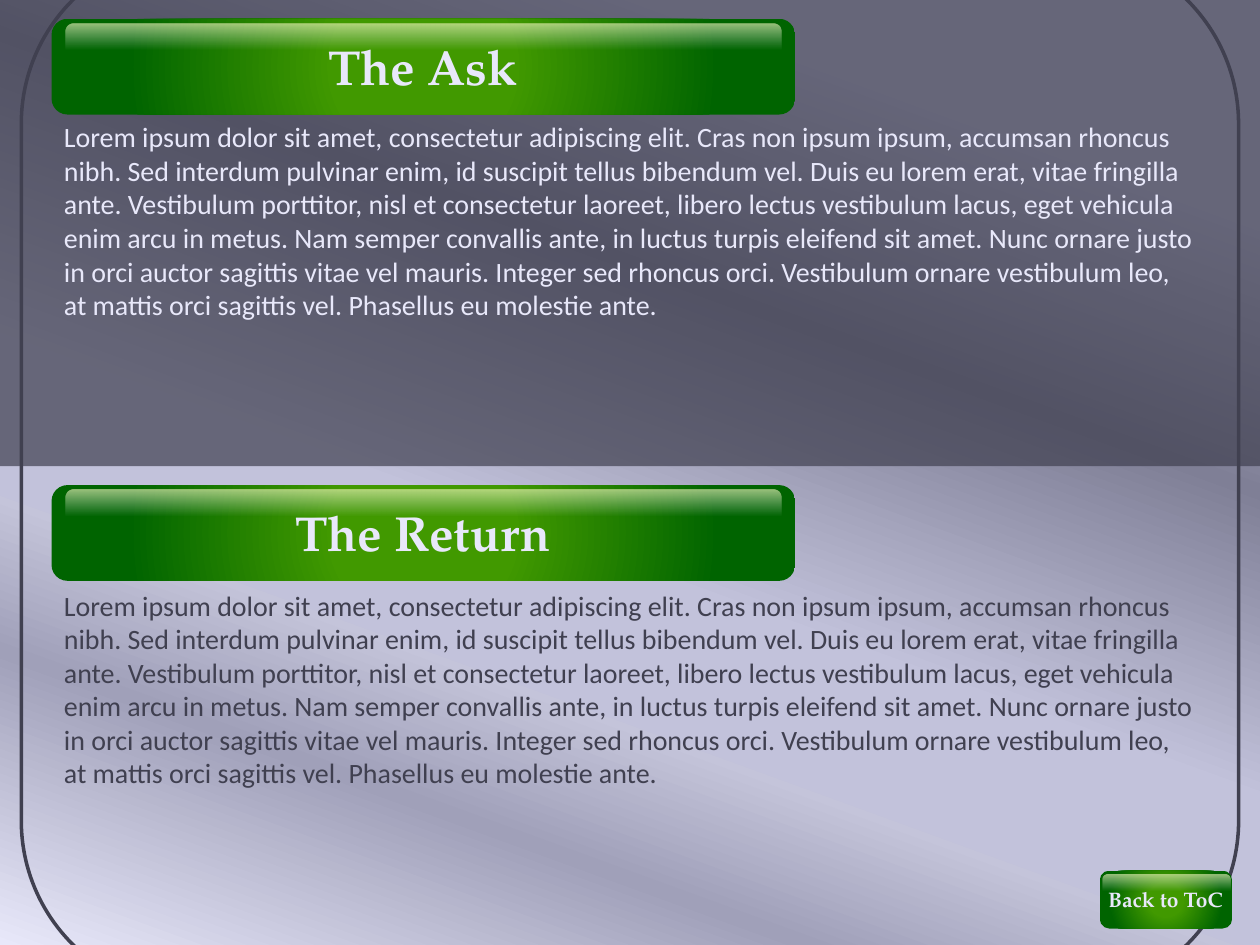
from dataclasses import dataclass
from typing import NamedTuple

from lxml import etree
from pptx import Presentation
from pptx import util as u
from pptx.dml.color import RGBColor
from pptx.enum import shapes, text
from pptx.oxml import ns

SERIF, SANS = "TeX Gyre Pagella", "Calibri"
PALE, DARK = "E8E8FA", "404050"
LOREM = (
    "Lorem ipsum dolor sit amet, consectetur adipiscing elit. Cras non ipsum ipsum, "
    "accumsan rhoncus nibh. Sed interdum pulvinar enim, id suscipit tellus bibendum vel. "
    "Duis eu lorem erat, vitae fringilla ante. Vestibulum porttitor, nisl et consectetur "
    "laoreet, libero lectus vestibulum lacus, eget vehicula enim arcu in metus. Nam semper "
    "convallis ante, in luctus turpis eleifend sit amet. Nunc ornare justo in orci auctor "
    "sagittis vitae vel mauris. Integer sed rhoncus orci. Vestibulum ornare vestibulum leo, "
    "at mattis orci sagittis vel. Phasellus eu molestie ante."
)


class Box(NamedTuple):
    left: float
    top: float
    width: float
    height: float

    def emu(self) -> list:
        return [u.Cm(v) for v in self]

    def down(self, dy: float) -> "Box":
        return self._replace(top=self.top + dy)


class Stop(NamedTuple):
    pos: int
    color: str
    alpha: int = 100


@dataclass
class Button:
    label: str
    size: int
    bar: Box
    gloss: Box
    caption: Box


@dataclass
class Section:
    title: str
    top: float
    body_top: float
    color: str


SKY = [Stop(16, "C0C0DC"), Stop(35, "7F7F96"), Stop(57, "C2C2DB"),
       Stop(68, "C4C4DA"), Stop(79, "A0A0B9"), Stop(100, PALE)]
GREEN = [Stop(24, "419900"), Stop(79, "006400")]
GLOSS = [Stop(0, "FFFFCC", 60), Stop(55, "E1E8F5", 0)]

SECTIONS = [Section("The Ask", 0, 2.29, PALE), Section("The Return", 9.4, 11.73, DARK)]
BAR = Box(1.04, 0.38, 14.99, 1.93)
BAR_GLOSS = Box(1.32, 0.48, 14.43, 0.97)
BAR_CAPTION = Box(2.01, 0.61, 13.03, 1.45)
BACK = Button("Back to ToC", 12, Box(22.17, 17.55, 2.67, 1.17),
              Box(22.23, 17.63, 2.57, 0.61), Box(21.59, 17.75, 3.81, 0.76))


def rgb(color: str) -> RGBColor:
    return RGBColor.from_string(color)


def sub(parent, tag: str, **attrs):
    return etree.SubElement(parent, ns.qn(tag), {k: str(v) for k, v in attrs.items()})


def set_gradient(fill, parent, stops: list, angle: int | None = None) -> None:
    fill.background()
    grad = etree.Element(ns.qn("a:gradFill"), rotWithShape="1")
    parent.replace(parent.find(ns.qn("a:noFill")), grad)
    gs_list = sub(grad, "a:gsLst")
    for stop in stops:
        gs = sub(gs_list, "a:gs", pos=stop.pos * 1000)
        clr = sub(gs, "a:srgbClr", val=stop.color)
        if stop.alpha < 100:
            sub(clr, "a:alpha", val=stop.alpha * 1000)
    if angle is None:
        circle = sub(grad, "a:path", path="circle")
        sub(circle, "a:fillToRect", l=50000, t=50000, r=50000, b=50000)
    else:
        sub(grad, "a:lin", ang=angle * 60000, scaled=0)


def add_shape(parent, kind, box: Box):
    sp = parent.add_shape(kind, *box.emu())
    sp.shadow.inherit = False
    sp.fill.background()
    sp.line.fill.background()
    return sp


def add_text(parent, box: Box, words: str, size: int, font: str, color: str,
             title: bool = False) -> None:
    tf = parent.add_textbox(*box.emu()).text_frame
    tf.word_wrap = True
    tf.auto_size = text.MSO_AUTO_SIZE.SHAPE_TO_FIT_TEXT
    tf.text = words
    p = tf.paragraphs[0]
    p.alignment = text.PP_ALIGN.CENTER if title else text.PP_ALIGN.LEFT
    f = p.runs[0].font
    f.size, f.name, f.bold = u.Pt(size), font, title
    f.color.rgb = rgb(color)


def add_button(s, button: Button) -> None:
    grp = s.shapes.add_group_shape().shapes
    for box, stops, angle in ((button.bar, GREEN, None), (button.gloss, GLOSS, 90)):
        sp = add_shape(grp, shapes.MSO_SHAPE.ROUNDED_RECTANGLE, box)
        set_gradient(sp.fill, sp._element.spPr, stops, angle)
    add_text(grp, button.caption, button.label, button.size, SERIF, PALE, title=True)


def add_section(s, section: Section) -> None:
    add_text(s.shapes, Box(1.04, section.body_top, 23.32, 5.05), LOREM, 16, SANS,
             section.color)
    boxes = [b.down(section.top) for b in (BAR, BAR_GLOSS, BAR_CAPTION)]
    add_button(s, Button(section.title, 28, *boxes))


def add_backdrop(s) -> None:
    fill = s.background.fill
    fill.background()
    set_gradient(fill, s._element.find(".//" + ns.qn("p:bgPr")), SKY, 110)

    frame = add_shape(s.shapes, shapes.MSO_SHAPE.ROUNDED_RECTANGLE,
                      Box(0.43, -1.02, 24.54, 21.08))
    frame.line.color.rgb = rgb(DARK)
    frame.line.width = u.Pt(2)

    band = add_shape(s.shapes, shapes.MSO_SHAPE.RECTANGLE, Box(0, 0, 25.4, 9.4))
    band.fill.solid()
    band.fill.fore_color.rgb = rgb(DARK)
    clr = band._element.spPr.find(ns.qn("a:solidFill")).find(ns.qn("a:srgbClr"))
    sub(clr, "a:alpha", val=70000)


def main() -> None:
    prs = Presentation()
    prs.slide_width, prs.slide_height = u.Cm(25.4), u.Cm(19.05)
    s = prs.slides.add_slide(prs.slide_layouts[6])
    add_backdrop(s)
    for section in SECTIONS:
        add_section(s, section)
    add_button(s, BACK)
    prs.save("out.pptx")


if __name__ == "__main__":
    main()
